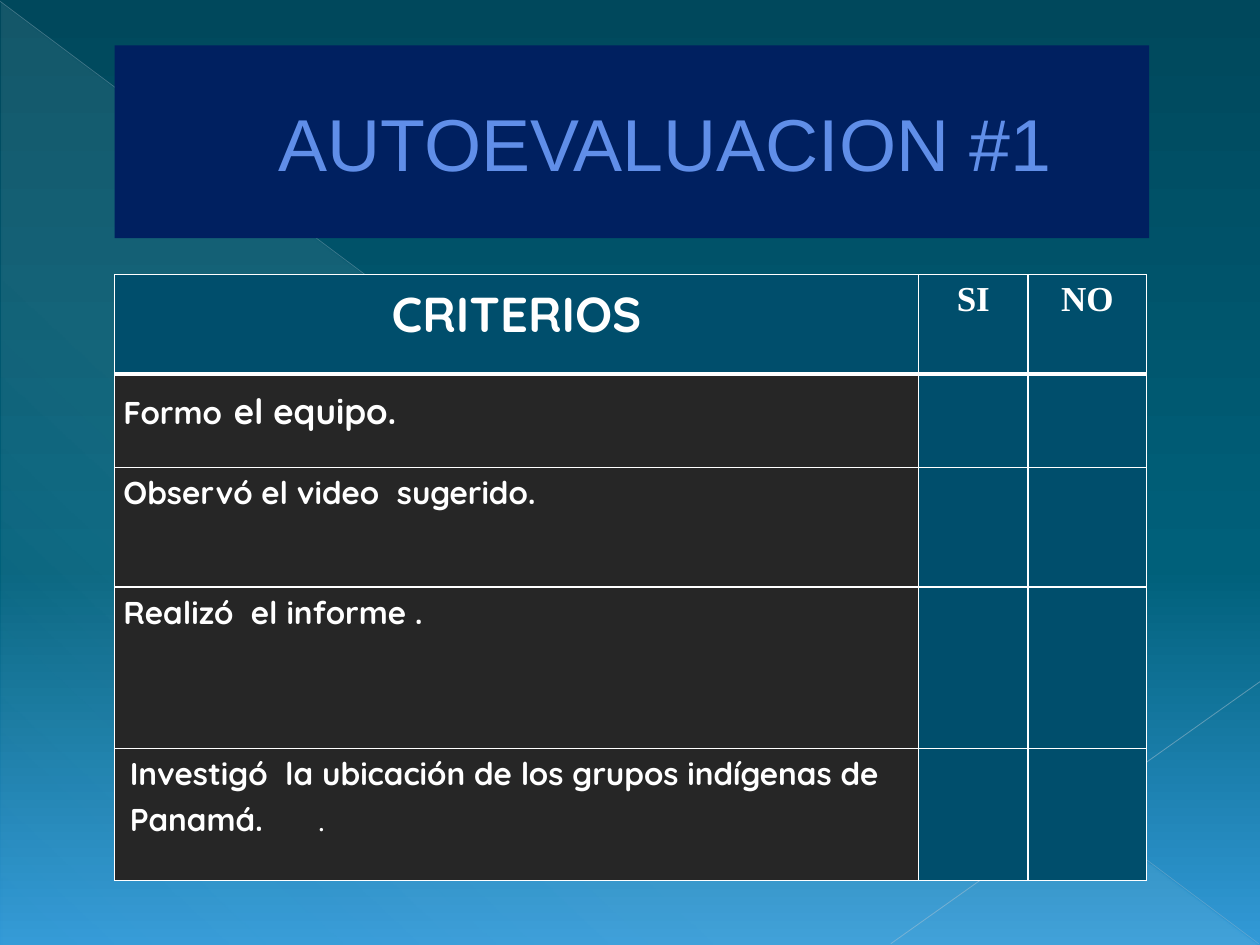
from lxml import etree
from pptx import Presentation
from pptx.dml.color import RGBColor
from pptx.enum.shapes import MSO_CONNECTOR, MSO_SHAPE
from pptx.enum.text import MSO_ANCHOR, MSO_AUTO_SIZE, PP_ALIGN
from pptx.oxml.ns import qn
from pptx.util import Emu, Inches, Pt

CENTER, LEFT = PP_ALIGN.CENTER, PP_ALIGN.LEFT
MIDDLE = MSO_ANCHOR.MIDDLE
STRAIGHT = MSO_CONNECTOR.STRAIGHT
TITLE_ONLY = 5

COLORS = {
    "sky_top": "00485C", "sky_middle": "00607A", "sky_bottom": "3299D7",
    "glow": "DBF5F9", "diagonal": "ACC0CE", "corner_line": "B5C7D3",
    "banner": "002060", "title": "608EE8",
    "answer": "004E6C", "criterion": "262626", "white": "FFFFFF",
}
SANS, SERIF = "Quicksand", "Times New Roman"

TITLE = "AUTOEVALUACION #1"
# Each text is a list of (words, font, size)
HEADINGS = [
    [("CRITERIOS", SANS, 28)],
    [("SI", SERIF, 20)],
    [("NO", SERIF, 20)],
]
CRITERIA = [
    [("Formo", SANS, 18), (" ", SANS, 24), ("el equipo.", SANS, 20)],
    [("Observó el video  sugerido.", SANS, 18)],
    [("Realizó  el informe .", SANS, 18)],
    [("Investigó  la ubicación de los grupos indígenas de Panamá.", SANS, 18),
     ("\t.", SERIF, 12)],
]
COLUMN_WIDTHS = [6.38, 0.87, 0.94]
ROW_HEIGHTS = [0.79, 0.74, 0.95, 1.28, 1.05]
TABLE_LEFT, TABLE_TOP = 0.91, 2.18
# start, end, color, width, opacity
BACKDROP_LINES = [
    ((0, 0.01), (9.99, 7.49), "diagonal", 0.39, 35),
    ((10, 5.41), (7.07, 7.49), "corner_line", 0.47, 45),
]


def rgb(name):
    return RGBColor.from_string(COLORS[name])


def add_color(parent, name, opacity=100):
    color = etree.SubElement(parent, qn("a:srgbClr"), val=COLORS[name])
    if opacity < 100:
        etree.SubElement(color, qn("a:alpha"), val=str(opacity * 1000))


def set_gradient(fill, element, stops, angle):
    """Fill with (position, color, opacity) stops, angle clockwise."""
    fill.gradient()
    gradient = element.find(".//" + qn("a:gradFill"))
    for child in list(gradient):
        gradient.remove(child)
    stop_list = etree.SubElement(gradient, qn("a:gsLst"))
    for position, name, opacity in stops:
        stop = etree.SubElement(stop_list, qn("a:gs"), pos=str(position * 1000))
        add_color(stop, name, opacity)
    etree.SubElement(gradient, qn("a:lin"), ang=str(angle * 60000), scaled="0")


def write(frame, runs, color="white", bold=True, align=LEFT, spacing=1.15,
          indent=0, after=0, tab=None):
    paragraph = frame.paragraphs[0]
    paragraph.alignment = align
    paragraph.line_spacing = spacing
    paragraph.space_after = Pt(after)
    properties = paragraph._p.get_or_add_pPr()
    properties.set("marL", str(Inches(indent)))
    properties.set("indent", "0")
    if tab:
        tabs = etree.SubElement(properties, qn("a:tabLst"))
        etree.SubElement(tabs, qn("a:tab"), pos=str(Inches(tab)), algn="l")
    for words, font, size in runs:
        run = paragraph.add_run()
        run.text = words
        run.font.name, run.font.size, run.font.bold = font, Pt(size), bold
        run.font.color.rgb = rgb(color)


def style_cell(cell, fill, bottom_width=1, margin=0.07):
    cell.margin_left = cell.margin_right = Inches(margin)
    cell.margin_top = cell.margin_bottom = 0
    cell.fill.solid()
    cell.fill.fore_color.rgb = rgb(fill)
    properties = cell._tc.get_or_add_tcPr()
    widths = {"lnL": 1, "lnR": 1, "lnT": 1, "lnB": bottom_width}
    for position, (side, width) in enumerate(widths.items()):
        border = etree.Element(qn("a:" + side), w=str(Pt(width)))
        add_color(etree.SubElement(border, qn("a:solidFill")), "white")
        properties.insert(position, border)


def add_backdrop(slide):
    set_gradient(slide.background.fill, slide._element,
                 [(0, "sky_top", 100), (60, "sky_middle", 100), (100, "sky_bottom", 100)], 90)
    glow = slide.shapes.add_shape(MSO_SHAPE.RIGHT_TRIANGLE, Inches(0.01), Inches(0.02),
                                  Inches(9.98), Inches(7.48))
    glow.shadow.inherit = False
    glow.line.fill.background()
    set_gradient(glow.fill, glow._element,
                 [(0, "glow", 10), (70, "glow", 8), (100, "glow", 1)], 133)
    for start, end, color, width, opacity in BACKDROP_LINES:
        line = slide.shapes.add_connector(STRAIGHT, *map(Inches, start + end))
        line.line.width = Pt(width)
        line.line.color.rgb = rgb(color)
        swatch = line._element.spPr.find(".//" + qn("a:srgbClr"))
        etree.SubElement(swatch, qn("a:alpha"), val=str(opacity * 1000))
        etree.SubElement(line._element.spPr, qn("a:effectLst"))


def add_title(slide):
    title = slide.shapes.title
    slide.shapes._spTree.append(title._element)  # in front of the backdrop
    title.left, title.top = Inches(TABLE_LEFT), Inches(0.36)
    title.width, title.height = Inches(8.21), Inches(1.53)
    title.fill.solid()
    title.fill.fore_color.rgb = rgb("banner")
    frame = title.text_frame
    frame.auto_size = MSO_AUTO_SIZE.NONE
    frame.vertical_anchor = MIDDLE
    write(frame, [(TITLE, "Arial", 42)], color="title", bold=False,
          align=CENTER, spacing=1.0, indent=0.53)


def add_checklist(slide):
    table = slide.shapes.add_table(
        len(ROW_HEIGHTS), len(COLUMN_WIDTHS), Inches(TABLE_LEFT), Inches(TABLE_TOP),
        Inches(sum(COLUMN_WIDTHS)), Inches(sum(ROW_HEIGHTS))).table
    for column, width in zip(table.columns, COLUMN_WIDTHS):
        column.width = Inches(width)
    for row, height in zip(table.rows, ROW_HEIGHTS):
        row.height = Inches(height)
    for column, heading in enumerate(HEADINGS):
        cell = table.cell(0, column)
        style_cell(cell, "answer", bottom_width=3)
        write(cell.text_frame, heading, align=CENTER)
    for row, criterion in enumerate(CRITERIA, start=1):
        last = row == len(CRITERIA)
        cell = table.cell(row, 0)
        style_cell(cell, "criterion", margin=0.05 if last else 0.07)
        layout = {"indent": 0.07, "after": 10, "tab": 5.15} if last else {}
        write(cell.text_frame, criterion, **layout)
        for column in range(1, len(COLUMN_WIDTHS)):
            style_cell(table.cell(row, column), "answer")


def main():
    deck = Presentation()
    deck.slide_width, deck.slide_height = Inches(10), Inches(7.5)
    slide = deck.slides.add_slide(deck.slide_layouts[TITLE_ONLY])
    add_backdrop(slide)
    add_title(slide)
    add_checklist(slide)
    deck.save("out.pptx")


if __name__ == "__main__":
    main()
